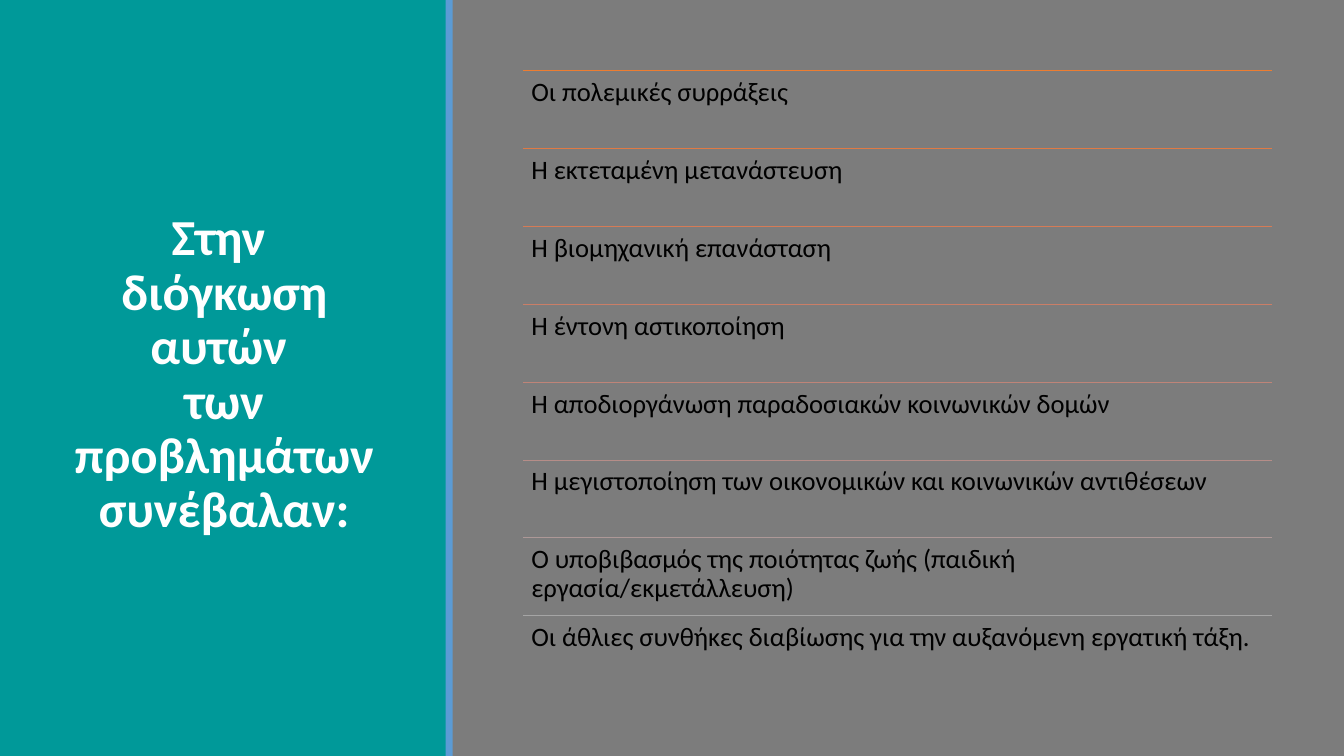
"""Builds a slide listing the causes that made the social problems grow."""
import pptx
import pptx.util
import pptx.dml.color
import pptx.enum.shapes
import pptx.enum.text
import pptx.oxml.ns
import lxml.etree

Inches = pptx.util.Inches
Pt = pptx.util.Pt

TITLE = "Στην \nδιόγκωση αυτών \nτων προβλημάτων συνέβαλαν:"
CAUSES = [
    ("Οι πολεμικές συρράξεις", "ED7D31"),
    ("Η εκτεταμένη μετανάστευση", "E07A44"),
    ("Η βιομηχανική επανάσταση", "D57B56"),
    ("Η έντονη αστικοποίηση", "CA7E67"),
    ("Η αποδιοργάνωση παραδοσιακών κοινωνικών δομών", "BF8478"),
    ("Η μεγιστοποίηση των οικονομικών και κοινωνικών αντιθέσεων", "B68D88"),
    ("Ο υποβιβασμός της ποιότητας ζωής (παιδική εργασία/εκμετάλλευση)", "AD9897"),
    ("Οι άθλιες συνθήκες διαβίωσης για την αυξανόμενη εργατική τάξη.", "A5A5A5"),
]
COLORS = {
    "background": "7C7C7C",
    "panel": "009999",
    "stripe": "5B9BD5",
    "title": "FFFFFF",
    "text": "000000",
}
FONT = "Calibri"
SLIDE_WIDTH, SLIDE_HEIGHT = 13.33, 7.5
LIST_LEFT, LIST_TOP, LIST_WIDTH, LIST_HEIGHT = 5.19, 0.7, 7.43, 6.18


def rgb(value):
    return pptx.dml.color.RGBColor.from_string(value)


def add_band(slide, left, width, color):
    shape = slide.shapes.add_shape(
        pptx.enum.shapes.MSO_SHAPE.RECTANGLE,
        Inches(left), 0, Inches(width), Inches(SLIDE_HEIGHT))
    shape.shadow.inherit = False
    shape.fill.solid()
    shape.fill.fore_color.rgb = rgb(color)
    shape.line.fill.background()


def add_text(slide, box, text, size, color, inset=(0.1, 0.05), bold=False):
    shape = slide.shapes.add_textbox(*map(Inches, box))
    frame = shape.text_frame
    frame.word_wrap = True
    frame.margin_left = frame.margin_right = Inches(inset[0])
    frame.margin_top = frame.margin_bottom = Inches(inset[1])
    paragraph = frame.paragraphs[0]
    paragraph.text = text
    paragraph.line_spacing = 0.9
    for run in paragraph.runs:
        run.font.name = FONT
        run.font.size = Pt(size)
        run.font.bold = bold
        run.font.color.rgb = rgb(color)
    return frame


def add_rule(slide, top, color):
    connector = slide.shapes.add_connector(
        pptx.enum.shapes.MSO_CONNECTOR.STRAIGHT,
        Inches(LIST_LEFT), Inches(top), Inches(LIST_LEFT + LIST_WIDTH), Inches(top))
    connector.line.color.rgb = rgb(color)
    connector.line.width = Pt(0.5)
    lxml.etree.SubElement(
        connector._element.spPr, pptx.oxml.ns.qn("a:effectLst"))


def main():
    presentation = pptx.Presentation()
    presentation.slide_width = Inches(SLIDE_WIDTH)
    presentation.slide_height = Inches(SLIDE_HEIGHT)
    slide = presentation.slides.add_slide(presentation.slide_layouts[6])

    add_band(slide, 0, SLIDE_WIDTH, COLORS["background"])
    add_band(slide, 0, 4.43, COLORS["panel"])
    title = add_text(slide, (0.54, 0.57, 3.37, 6.31), TITLE, 36,
                     COLORS["title"], bold=True)
    title.vertical_anchor = pptx.enum.text.MSO_ANCHOR.MIDDLE
    title.paragraphs[0].alignment = pptx.enum.text.PP_ALIGN.CENTER

    row_height = LIST_HEIGHT / len(CAUSES)
    for index, (cause, color) in enumerate(CAUSES):
        top = LIST_TOP + index * row_height
        add_rule(slide, top, color)
        add_text(slide, (LIST_LEFT, top, LIST_WIDTH, row_height), cause, 19,
                 COLORS["text"], inset=(0.08, 0.08))

    add_band(slide, 4.42, 0.07, COLORS["stripe"])
    presentation.save("out.pptx")


if __name__ == "__main__":
    main()
